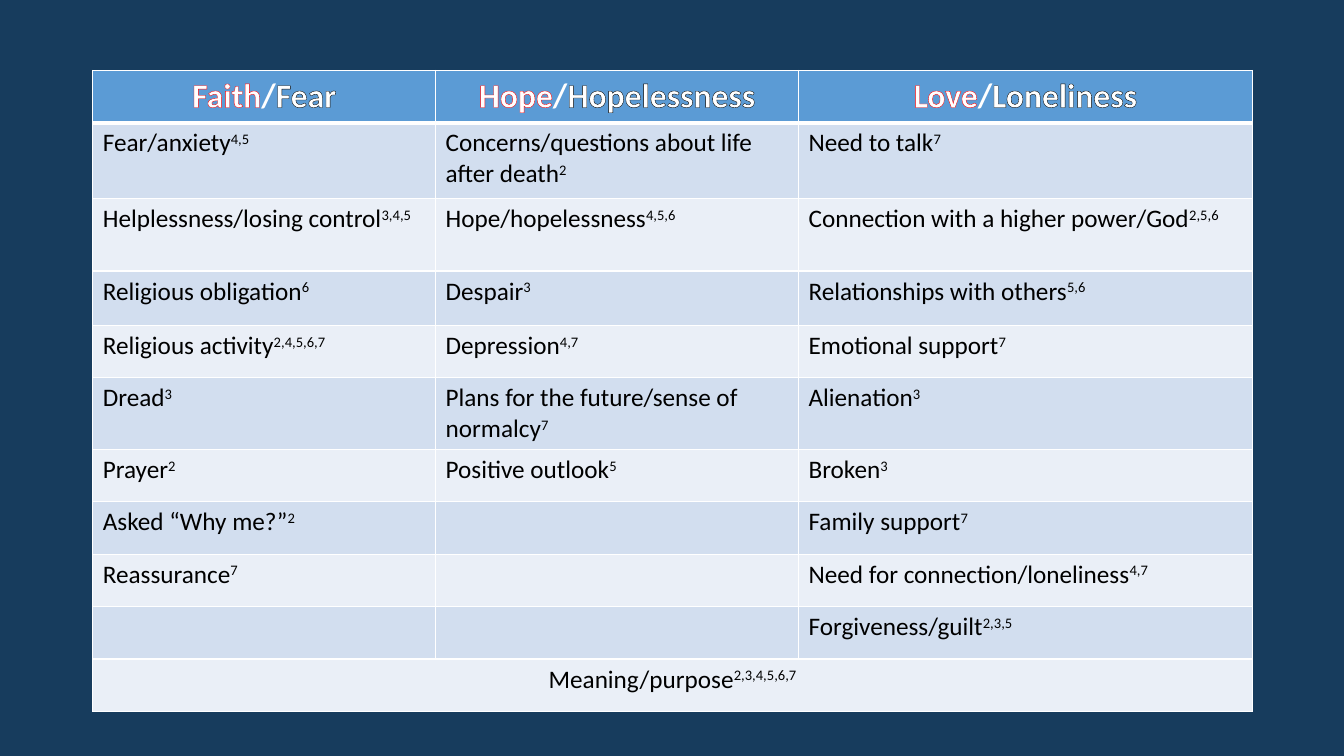
from pptx import Presentation
from pptx.dml.color import RGBColor
from pptx.enum.text import PP_ALIGN
from pptx.oxml import parse_xml
from pptx.oxml.ns import nsdecls
from pptx.util import Inches, Pt

CENTER = PP_ALIGN.CENTER
LEFT = PP_ALIGN.LEFT
FONT = "Calibri"
NAVY, BLUE, WHITE, BLACK, RED = "173C5D", "5B9BD5", "FFFFFF", "000000", "FF0000"
BANDS = ["D2DEEF", "EAEFF7"]
WIDTHS = [3.4, 3.6, 4.5]
HEIGHTS = [0.52, 0.75, 0.72, 0.54] + [0.52] * 7
HEADS = [("Faith", "Fear"), ("Hope", "Hopelessness"), ("Love", "Loneliness")]
ROWS = [
    [("Fear/anxiety", "4,5"), ("Concerns/questions about life after death", "2"),
     ("Need to talk", "7")],
    [("Helplessness/losing control", "3,4,5"), ("Hope/hopelessness", "4,5,6"),
     ("Connection with a higher power/God", "2,5,6")],
    [("Religious obligation", "6"), ("Despair", "3"), ("Relationships with others", "5,6")],
    [("Religious activity", "2,4,5,6,7"), ("Depression", "4,7"), ("Emotional support", "7")],
    [("Dread", "3"), ("Plans for the future/sense of normalcy", "7"), ("Alienation", "3")],
    [("Prayer", "2"), ("Positive outlook", "5"), ("Broken", "3")],
    [("Asked “Why me?”", "2"), None, ("Family support", "7")],
    [("Reassurance", "7"), None, ("Need for connection/loneliness", "4,7")],
    [None, None, ("Forgiveness/guilt", "2,3,5")],
    [("Meaning/purpose", "2,3,4,5,6,7"), None, None],
]


def paint(fill, color):
    fill.solid()
    fill.fore_color.rgb = RGBColor.from_string(color)


def make_line(tag, color, width):
    return parse_xml(
        f'<a:{tag} {nsdecls("a")} w="{int(Pt(width))}"><a:solidFill>'
        f'<a:srgbClr val="{color}"/></a:solidFill></a:{tag}>')


def style_cell(cell, color, top, bottom):
    props = cell._tc.get_or_add_tcPr()
    for tag, width in (("lnL", 1), ("lnR", 1), ("lnT", top), ("lnB", bottom)):
        props.append(make_line(tag, WHITE, width))
    paint(cell.fill, color)


def add_run(para, text, size, color, bold=False, edge=None, raised=False):
    run = para.add_run()
    run.text = text
    run.font.name = FONT
    run.font.size = Pt(size)
    run.font.bold = bold
    run.font.color.rgb = RGBColor.from_string(color)
    props = run._r.get_or_add_rPr()
    if edge:
        props.insert(0, make_line("ln", edge, 0.75))
    if raised:
        props.set("baseline", "30000")


def fill_head(cell, pair):
    style_cell(cell, BLUE, 1, 3)
    para = cell.text_frame.paragraphs[0]
    para.alignment = CENTER
    for text, edge in ((pair[0], RED), ("/", None), (pair[1], BLACK)):
        add_run(para, text, 24, WHITE, bold=True, edge=edge)


def fill_item(cell, item, row, align):
    style_cell(cell, BANDS[(row - 1) % 2], 3 if row == 1 else 1, 1)
    if item:
        para = cell.text_frame.paragraphs[0]
        para.alignment = align
        add_run(para, item[0], 18, BLACK)
        add_run(para, item[1], 18, BLACK, raised=True)


def add_grid(slide):
    frame = slide.shapes.add_table(
        len(HEIGHTS), len(WIDTHS), Inches(0.92), Inches(0.7),
        Inches(sum(WIDTHS)), Inches(sum(HEIGHTS)))
    table = frame.table
    for col, width in zip(table.columns, WIDTHS):
        col.width = Inches(width)
    for row, height in zip(table.rows, HEIGHTS):
        row.height = Inches(height)
    for col, pair in enumerate(HEADS):
        fill_head(table.cell(0, col), pair)
    last = len(ROWS)
    for row, items in enumerate(ROWS, 1):
        for col, item in enumerate(items):
            fill_item(table.cell(row, col), item, row, CENTER if row == last else LEFT)
    table.cell(last, 0).merge(table.cell(last, len(WIDTHS) - 1))


def main():
    deck = Presentation()
    deck.slide_width = Inches(13.33)
    deck.slide_height = Inches(7.5)
    slide = deck.slides.add_slide(deck.slide_layouts[6])
    paint(slide.background.fill, NAVY)
    add_grid(slide)
    deck.save("out.pptx")


if __name__ == "__main__":
    main()
